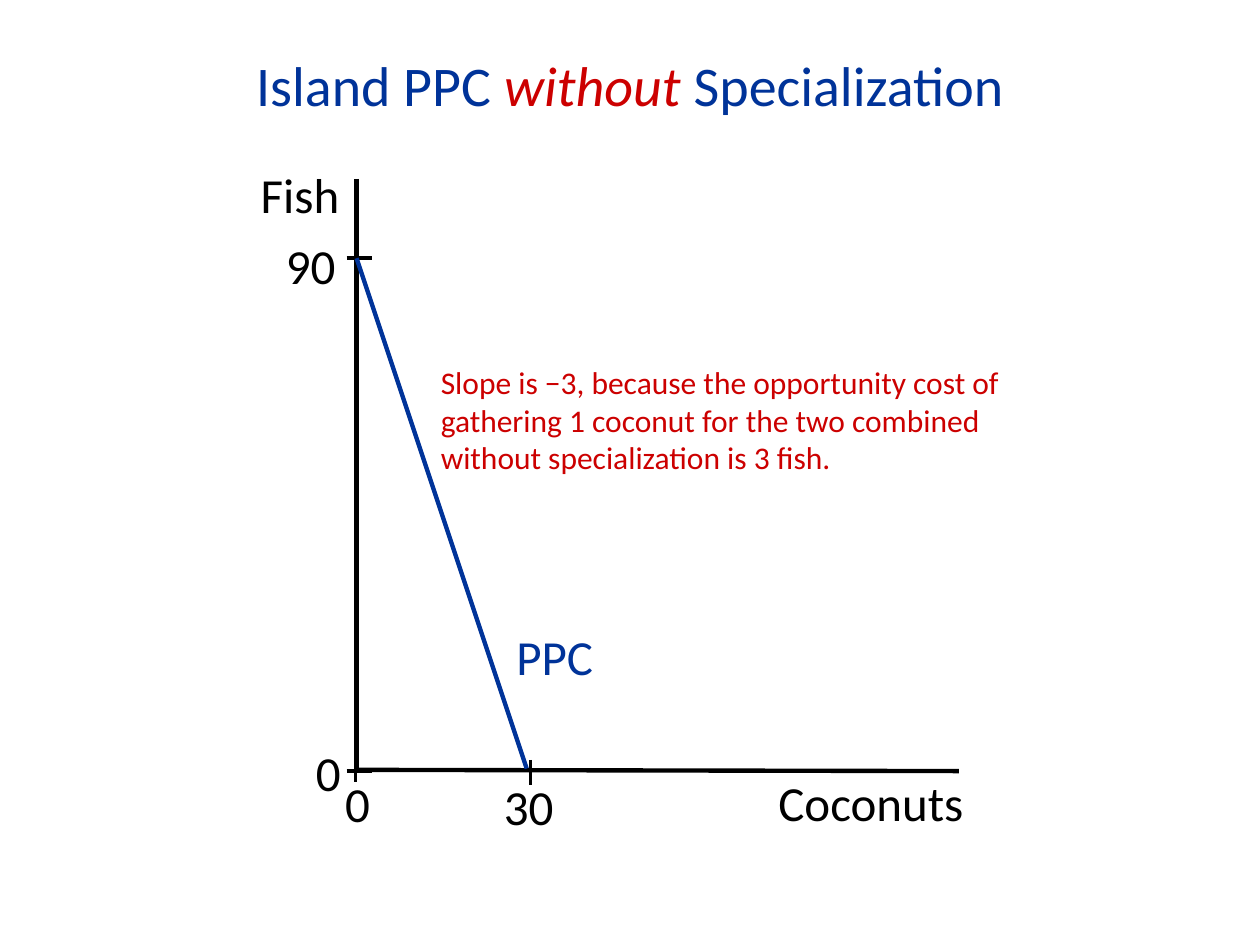
from dataclasses import dataclass
from typing import NamedTuple

from lxml.etree import SubElement
from pptx import Presentation
from pptx.dml.color import RGBColor
from pptx.enum.shapes import MSO_CONNECTOR as Connector
from pptx.enum.text import MSO_ANCHOR as Anchor, PP_ALIGN as Align
from pptx.oxml.ns import qn
from pptx.util import Inches, Pt


@dataclass(frozen=True)
class Theme:
    font: str = "Calibri"
    blue: RGBColor = RGBColor(0x00, 0x33, 0x99)
    red: RGBColor = RGBColor(0xCC, 0x00, 0x00)
    black: RGBColor = RGBColor(0x00, 0x00, 0x00)
    title_size: int = 32
    label_size: int = 28
    note_size: int = 18
    axis_width: float = 2.5
    tick_width: float = 2


class Box(NamedTuple):
    left: float
    top: float
    width: float
    height: float

    def inner(self, left, top, width, height):
        return Box(self.left + left, self.top + top, width, height)


THEME = Theme()


def add_text(page, box, spans, size, align=Align.LEFT, anchor=Anchor.TOP):
    frame = page.shapes.add_textbox(*(Inches(length) for length in box)).text_frame
    frame.word_wrap = True
    frame.vertical_anchor = anchor
    para = frame.paragraphs[0]
    para.alignment = align
    for text, color, italic in spans:
        span = para.add_run()
        span.text = text
        span.font.name = THEME.font
        span.font.size = Pt(size)
        span.font.italic = italic
        span.font.color.rgb = color


def add_line(page, box, start, end, color, width):
    ends = (box.left + start[0], box.top + start[1],
            box.left + end[0], box.top + end[1])
    line = page.shapes.add_connector(
        Connector.STRAIGHT, *(Inches(length) for length in ends))
    line.line.color.rgb = color
    line.line.width = Pt(width)
    SubElement(line._element.spPr, qn("a:effectLst"))


def add_title(page, box):
    spans = [
        ("Island PPC ", THEME.blue, False),
        ("without", THEME.red, True),
        (" Specialization", THEME.blue, False),
    ]
    add_text(page, box, spans, THEME.title_size, Align.CENTER, Anchor.MIDDLE)


def add_axes(page, box):
    axes = [
        ((0, 0), (0, box.height)),
        ((-0.02, box.height - 0.01), (box.width, box.height)),
    ]
    for start, end in axes:
        add_line(page, box, start, end, THEME.black, THEME.axis_width)

    tick = 0.2
    for y in (0.63, box.height):
        add_line(page, box, (-0.08, y), (tick - 0.08, y), THEME.black, THEME.tick_width)
    for x, y in ((-0.01, 4.59), (1.38, 4.61)):
        add_line(page, box, (x, y), (x, y + tick), THEME.black, THEME.tick_width)


def add_labels(page, box):
    labels = [
        ("Fish", -0.86, -0.16, 1.12, THEME.black),
        ("90", -0.66, 0.4, 0.68, THEME.black),
        ("0", -0.42, 4.42, 0.33, THEME.black),
        ("0", -0.19, 4.67, 0.33, THEME.black),
        ("30", 1.07, 4.69, 0.79, THEME.black),
        ("Coconuts", 3.25, 4.66, 1.95, THEME.black),
        ("PPC", 1.17, 3.5, 1, THEME.blue),
    ]
    for text, left, top, width, color in labels:
        add_text(page, box.inner(left, top, width, 0.57),
                 [(text, color, False)], THEME.label_size)


def add_graph(page, box):
    add_axes(page, box)
    add_line(page, box, (0, 0.63), (1.35, 4.68), THEME.blue, THEME.axis_width)
    add_labels(page, box)


def add_note(page, box):
    note = ("Slope is −3, because the opportunity cost of gathering 1 coconut "
            "for the two combined without specialization is 3 fish.")
    add_text(page, box, [(note, THEME.red, False)], THEME.note_size)


def main():
    deck = Presentation()
    deck.slide_width, deck.slide_height = Inches(10), Inches(7.5)
    page = deck.slides.add_slide(deck.slide_layouts[6])
    add_title(page, Box(0.7, 0.35, 8.6, 0.64))
    add_graph(page, Box(2.83, 1.42, 4.78, 4.7))
    add_note(page, Box(3.4, 2.83, 4.72, 1.01))
    deck.save("out.pptx")


if __name__ == "__main__":
    main()
